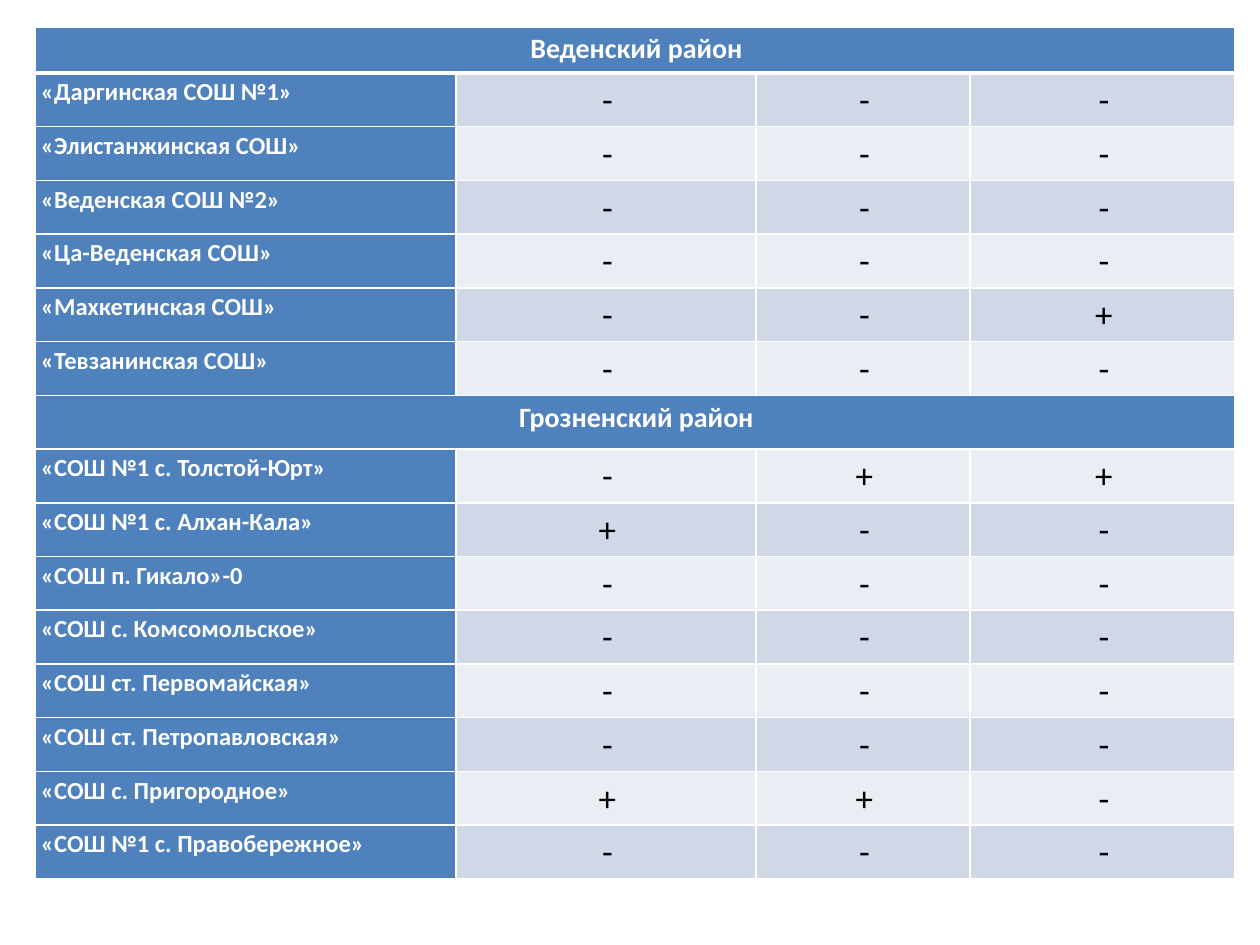
import pptx
import pptx.dml.color
import pptx.enum.text
import pptx.oxml
import pptx.oxml.ns
import pptx.util

RGBColor = pptx.dml.color.RGBColor
WHITE = RGBColor(0xFF, 0xFF, 0xFF)
BLACK = RGBColor(0, 0, 0)
BLUE = RGBColor(0x4F, 0x81, 0xBD)
DARK = RGBColor(0xD0, 0xD8, 0xE8)
LIGHT = RGBColor(0xE9, 0xED, 0xF4)
SCALE = 914400 // 126
LEFT = pptx.enum.text.PP_ALIGN.LEFT
MID = pptx.enum.text.PP_ALIGN.CENTER

HEAD = {"size": pptx.util.Pt(16), "bold": True, "color": WHITE, "align": MID}
NAME = {"size": pptx.util.Pt(14), "bold": True, "color": WHITE, "align": LEFT}
MARK = {"size": pptx.util.Pt(20), "bold": False, "color": BLACK, "align": MID}
INSETS = {"margin_left": 6, "margin_right": 6, "margin_top": 0, "margin_bottom": 0}
WIDTHS = [421, 300, 214, 265]

ROWS = [
    ("Веденский район", ""),
    ("«Даргинская СОШ №1»", "---"),
    ("«Элистанжинская СОШ»", "---"),
    ("«Веденская СОШ №2»", "---"),
    ("«Ца-Веденская СОШ»", "---"),
    ("«Махкетинская СОШ»", "--+"),
    ("«Тевзанинская СОШ»", "---"),
    ("Грозненский район", ""),
    ("«СОШ №1 с. Толстой-Юрт»", "-++"),
    ("«СОШ №1 с. Алхан-Кала»", "+--"),
    ("«СОШ п. Гикало»-0", "---"),
    ("«СОШ с. Комсомольское»", "---"),
    ("«СОШ ст. Первомайская»", "---"),
    ("«СОШ ст. Петропавловская»", "---"),
    ("«СОШ с. Пригородное»", "++-"),
    ("«СОШ №1 с. Правобережное»", "---"),
]


def px(size):
    """Turn px into EMU."""
    return pptx.util.Emu(size * SCALE)


def edge(cell, base):
    """Draw white borders round a cell, with the given bottom width in points."""
    props = cell._tc.get_or_add_tcPr()
    for spot, side in enumerate("LRTB"):
        width = pptx.util.Pt(base if side == "B" else 1)
        props.insert(spot, pptx.oxml.parse_xml(
            f'<a:ln{side} {pptx.oxml.ns.nsdecls("a")} w="{width}"><a:solidFill>'
            f'<a:srgbClr val="{WHITE}"/></a:solidFill></a:ln{side}>'))


def write(cell, text, style, fill, base=1):
    """Fill one cell with styled text, colour and borders."""
    for key, size in INSETS.items():
        setattr(cell, key, px(size))
    cell.fill.solid()
    cell.fill.fore_color.rgb = fill
    edge(cell, base)
    para = cell.text_frame.paragraphs[0]
    para.alignment = style["align"]
    para.line_spacing = 1.15
    if style["align"] == MID:
        para._p.get_or_add_pPr().set("marL", str(px(3)))
    run = para.add_run()
    run.text = text
    run.font.name = "Calibri"
    for key in ("size", "bold"):
        setattr(run.font, key, style[key])
    run.font.color.rgb = style["color"]


def grid(slide, left, top, width, height, first):
    """Place the table of schools in the given box, with a first row of given height."""
    frame = slide.shapes.add_table(
        len(ROWS), len(WIDTHS), px(left), px(top), px(width), px(height))
    table = frame.table
    for col, size in zip(table.columns, WIDTHS):
        col.width = px(size)
    for num, (name, marks) in enumerate(ROWS):
        rest = px(height - first) // (len(ROWS) - 1)
        table.rows[num].height = rest if num else px(first)
        cell = table.cell(num, 0)
        base = 1 if num else 3
        if not marks:
            cell.merge(table.cell(num, len(WIDTHS) - 1))
            for part in range(1, len(WIDTHS)):
                edge(table.cell(num, part), base)
        write(cell, name, NAME if marks else HEAD, BLUE, base)
        for col, mark in enumerate(marks, 1):
            write(table.cell(num, col), mark, MARK, DARK if num % 2 else LIGHT)


def main():
    """Build and save the slide."""
    deck = pptx.Presentation()
    deck.slide_width, deck.slide_height = px(1260), px(945)
    slide = deck.slides.add_slide(deck.slide_layouts[6])
    grid(slide, 35, 27, 1200, 852, 46)
    deck.save("out.pptx")


if __name__ == "__main__":
    main()
